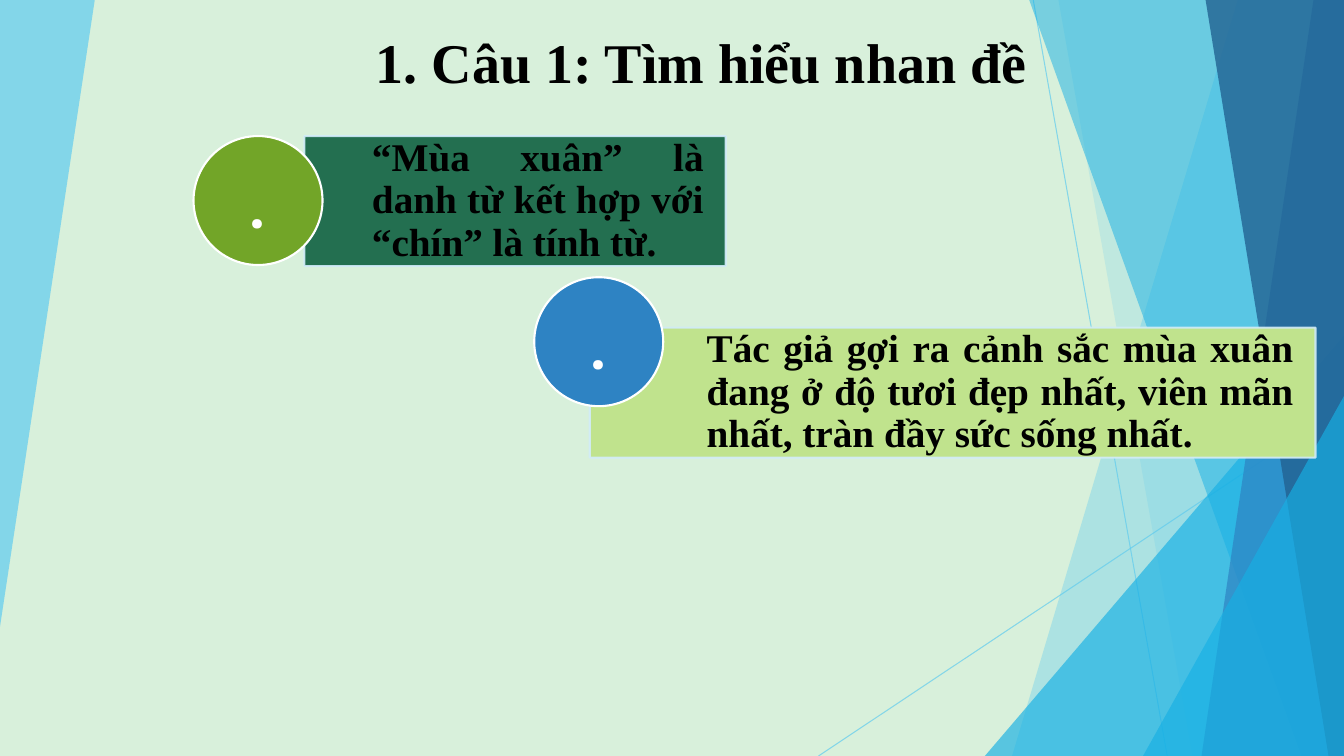
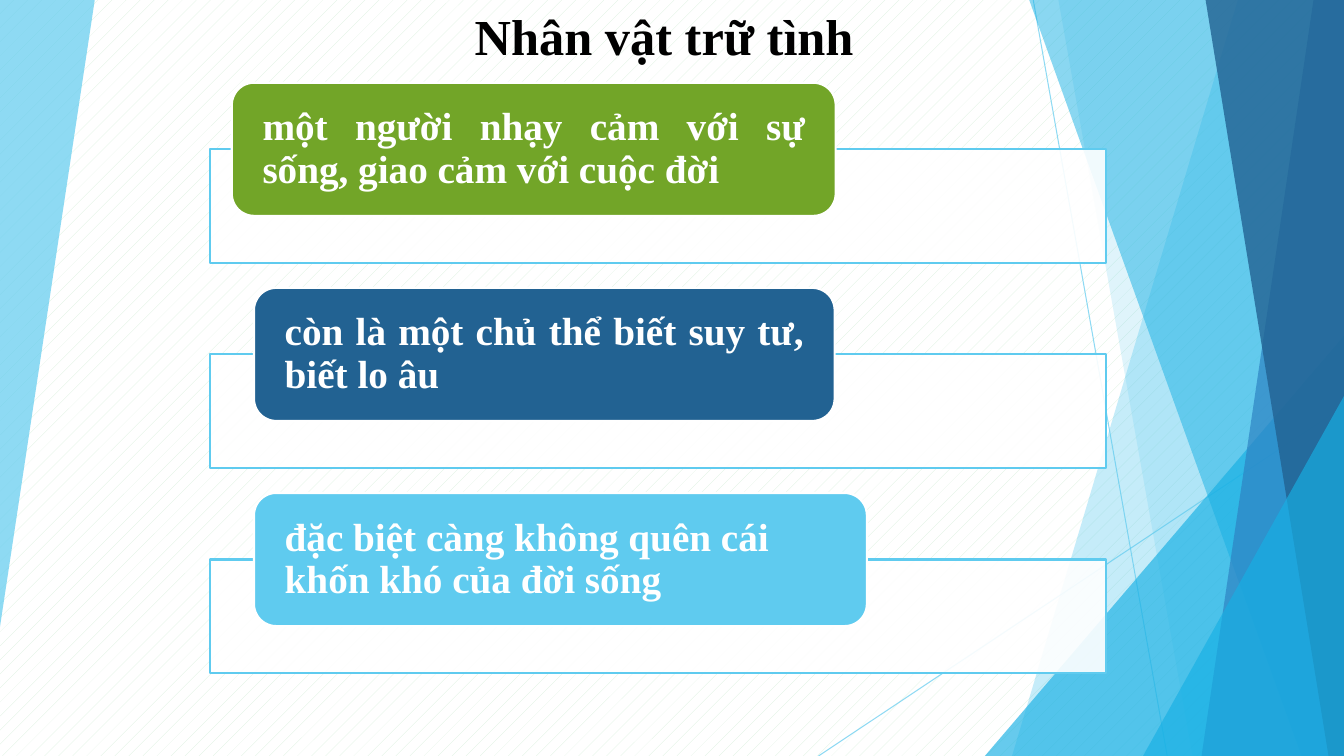
from lxml.etree import SubElement
from pptx import Presentation
from pptx.dml.color import RGBColor as Rgb
from pptx.enum.dml import MSO_PATTERN as Pattern
from pptx.enum.shapes import MSO_CONNECTOR as Wire, MSO_SHAPE as Form
from pptx.enum.text import MSO_ANCHOR as Anchor, MSO_AUTO_SIZE as Auto, PP_ALIGN as Align
from pptx.oxml.ns import qn
from pptx.util import Inches, Pt

HUES = {
    "mint": "D8F0DB", "white": "FFFFFF", "black": "000000", "sky": "5FCBEF",
    "cyan": "17B0E4", "blue": "2E83C3", "navy": "226292", "pine": "236F50",
    "leaf": "72A528", "lime": "C0E38D", "ice": "D2ECF9",
}
ink = {name: Rgb.from_string(code) for name, code in HUES.items()}
SERIF = "Times New Roman"

deck = Presentation()
deck.slide_width, deck.slide_height = Inches(13.33), Inches(7.5)
col, row = deck.slide_width / 100, deck.slide_height / 100
base = deck.slide_layouts[6]
for hold in list(base.placeholders):
    hold._element.getparent().remove(hold._element)


def paint(shape, fill, edge=None, alphas=(100, 100)):
    shape.shadow.inherit = False
    shape.fill.solid()
    shape.fill.fore_color.rgb = ink[fill]
    if edge:
        shape.line.color.rgb = ink[edge]
        shape.line.width = Pt(1.5)
    else:
        shape.line.fill.background()
    for tint, alpha in zip(shape._element.spPr.iter(qn("a:srgbClr")), alphas):
        if alpha < 100:
            SubElement(tint, qn("a:alpha")).set("val", str(alpha * 1000))
    return shape


def write(shape, text, size, hue, align, pads, face=SERIF, gap=0.9, **more):
    frame = shape.text_frame
    sides = ("margin_left", "margin_top", "margin_right", "margin_bottom")
    form = {"word_wrap": True, "vertical_anchor": Anchor.MIDDLE}
    form |= {side: Inches(pad) for side, pad in zip(sides, pads)} | more
    for key, value in form.items():
        setattr(frame, key, value)
    para = frame.paragraphs[0]
    para.alignment, para.line_spacing = align, gap
    run = para.add_run()
    run.text = text
    for key, value in {"name": face, "size": Pt(size), "bold": face == SERIF}.items():
        setattr(run.font, key, value)
    run.font.color.rgb = ink[hue]


first = deck.slides.add_slide(base)
art = first.shapes

pen = art.build_freeform(0, 0, scale=1.0)
pen.add_line_segments([(7.05 * col, 0), (0, 82.9 * row)])
paint(pen.convert_to_shape(), "sky", alphas=[70])

for x, y, right, low in [(76.88, 0, 86.85, 100), (100, 53.73, 60.9, 100)]:
    ends = [int(n) for n in (x * col, y * row, right * col, low * row)]
    wire = art.add_connector(Wire.STRAIGHT, *ends)
    wire.line.color.rgb = ink["sky"]
    wire.line.width = Pt(0.75)
    tint = next(wire._element.spPr.iter(qn("a:srgbClr")))
    SubElement(tint, qn("a:alpha")).set("val", "70000")
    SubElement(wire._element.spPr, qn("a:effectLst"))

for kind, top, foot, hue, alpha in [
    ("panel", 92.1, 75.3, "sky", 36),
    ("panel", 78.75, 88.73, "sky", 20),
    ("peak", 44.4, 73.28, "cyan", 66),
    ("panel", 76.58, 96.83, "cyan", 50),
    ("panel", 97.73, 89.4, "blue", 70),
    ("panel", 89.7, 98.85, "navy", 80),
    ("peak", 52.4, 85.05, "cyan", 66),
]:
    if kind == "panel":
        pen = art.build_freeform(top * col, 0, scale=1.0)
        pen.add_line_segments([(100 * col, 0), (100 * col, 100 * row), (foot * col, 100 * row)])
        facet = pen.convert_to_shape()
    else:
        box = [int(n) for n in (foot * col, top * row, (100 - foot) * col, (100 - top) * row)]
        facet = art.add_shape(Form.ISOSCELES_TRIANGLE, *box)
        facet.adjustments[0] = 1
    paint(facet, hue, alphas=[alpha])

for part in list(art):
    base.shapes._spTree.append(part._element)

first.background.fill.solid()
first.background.fill.fore_color.rgb = ink["mint"]
second = deck.slides.add_slide(base)
back = second.background.fill
back.patterned()
back.pattern = Pattern.PERCENT_5
back.fore_color.rgb, back.back_color.rgb = ink["mint"], ink["white"]

for slide, text, size, x, y, wide, high in [
    (first, "1. Câu 1: Tìm hiểu nhan đề", 40, 27.23, 2.93, 52.35, 10.27),
    (second, "Nhân vật trữ tình", 36, 34.58, 0, 29.78, 9.47),
]:
    box = [int(n) for n in (x * col, y * row, wide * col, high * row)]
    title = slide.shapes.add_textbox(*box)
    write(title, text, size, "black", Align.JUSTIFY, (0.1, 0.05, 0.1, 0.05), gap=1.0,
          vertical_anchor=Anchor.TOP, auto_size=Auto.SHAPE_TO_FIT_TEXT)

for text, x, y, wide, pad, hue, left, top, dot in [
    ("“Mùa xuân” là danh từ kết hợp với “chín” là tính từ.",
     22.65, 18, 31.35, 0.67, "pine", 14.4, 18, "leaf"),
    ("Tác giả gợi ra cảnh sắc mùa xuân đang ở độ tươi đẹp nhất, viên mãn nhất, "
     "tràn đầy sức sống nhất.",
     43.88, 43.33, 54, 1.16, "lime", 39.75, 36.67, "blue"),
]:
    box = [int(n) for n in (x * col, y * row, wide * col, 17.2 * row)]
    bar = paint(art.add_shape(Form.RECTANGLE, *box), hue, "ice", (100, 90))
    write(bar, text, 28, "black", Align.JUSTIFY, (pad, 0.22, 0.22, 0.22))
    box = [int(n) for n in (left * col, top * row, 9.6 * col, 9.6 * col)]
    disc = paint(art.add_shape(Form.OVAL, *box), dot, "white")
    write(disc, ".", 62, "white", Align.CENTER, (0, 0, 0, 0), "Roboto")

cards = [
    ("một người nhạy cảm với sự sống, giao cảm với cuộc đời", 17.25, 44.93, "leaf", Align.JUSTIFY),
    ("còn là một chủ thể biết suy tư, biết lo âu", 18.9, 43.2, "navy", Align.JUSTIFY),
    ("đặc biệt càng không quên cái khốn khó của đời sống", 18.9, 45.6, "sky", Align.LEFT),
]
for step, (text, x, wide, hue, align) in enumerate(cards):
    top, high = 10.95 + 27.13 * step, 17.6
    box = [int(n) for n in (15.6 * col, (top + high / 2) * row, 66.68 * col, 15.07 * row)]
    paint(second.shapes.add_shape(Form.RECTANGLE, *box), "white", "sky", (90, 100))
    box = [int(n) for n in (x * col, top * row, wide * col, high * row)]
    card = paint(second.shapes.add_shape(Form.ROUNDED_RECTANGLE, *box), hue, "white")
    write(card, text, 28, "white", align, (0.24, 0, 0.24, 0))

deck.save("out.pptx")
